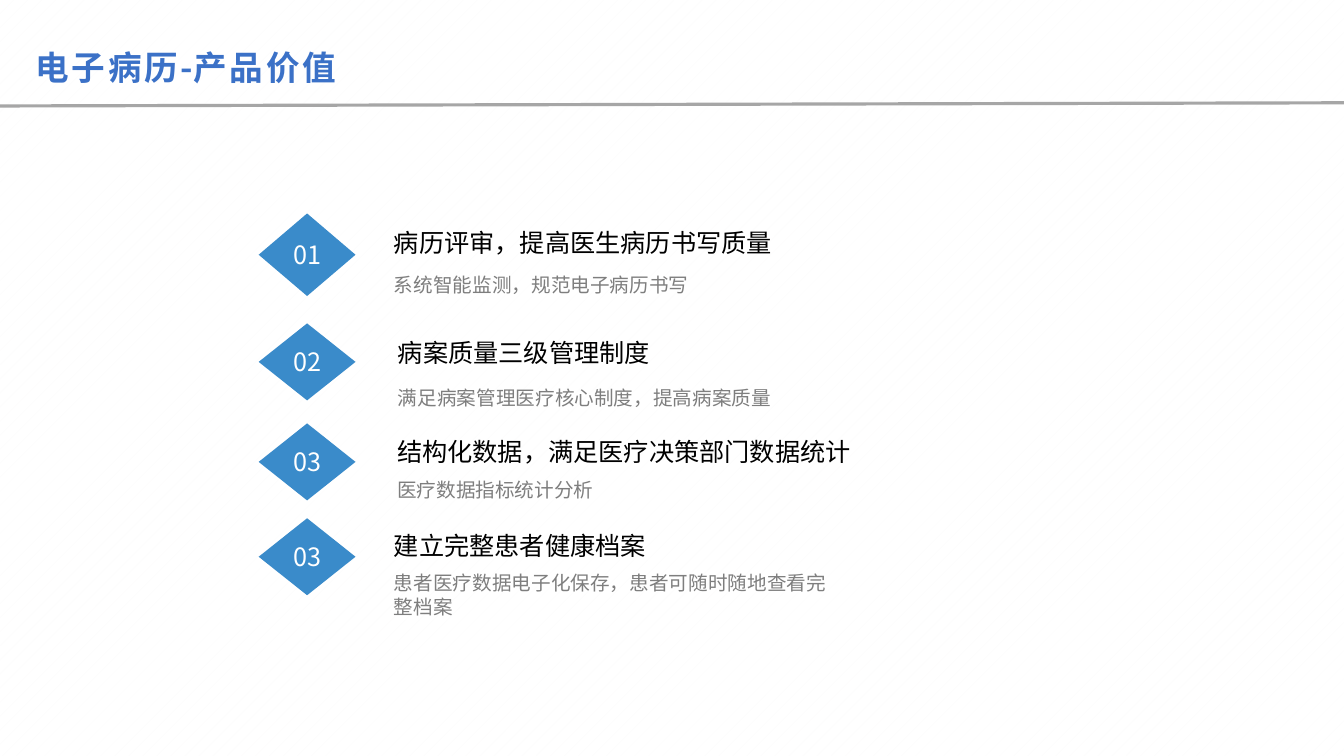
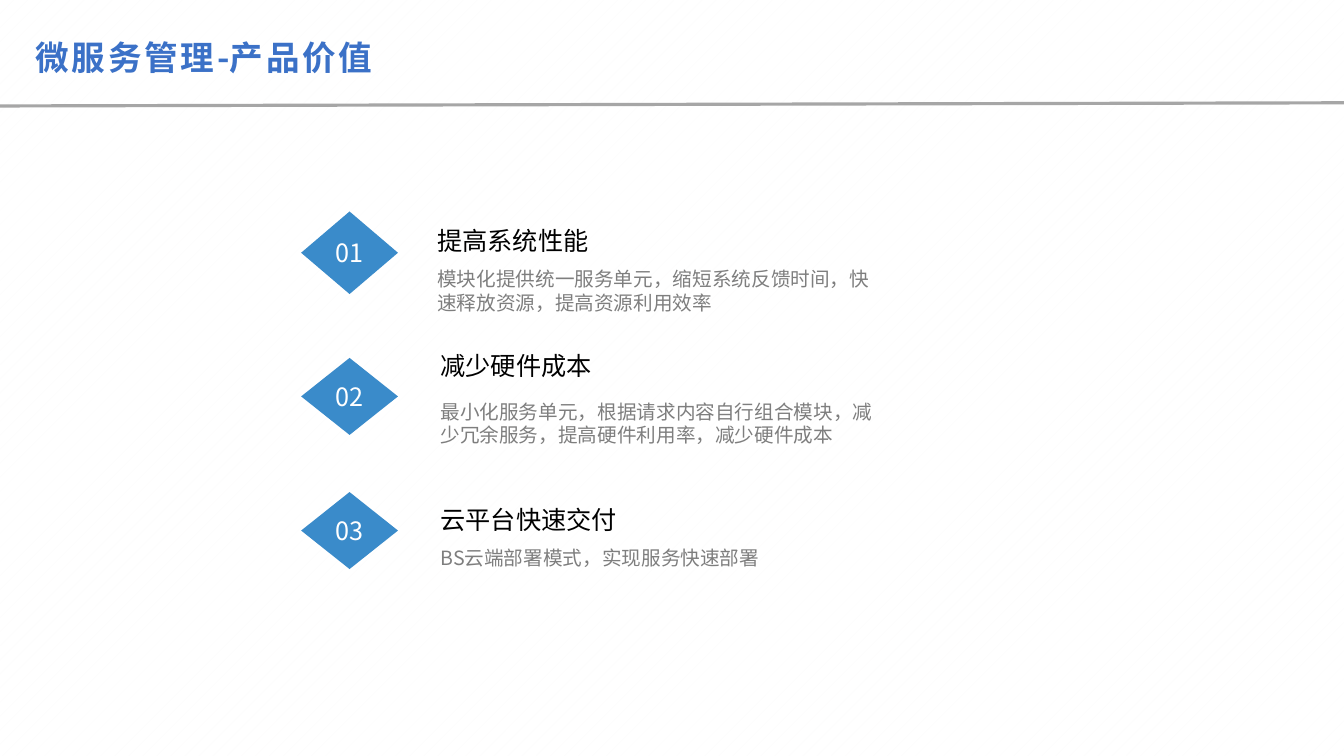
from dataclasses import dataclass

from pptx import Presentation
from pptx.dml.color import RGBColor
from pptx.enum.dml import MSO_PATTERN
from pptx.enum.shapes import MSO_CONNECTOR, MSO_SHAPE
from pptx.enum.text import MSO_ANCHOR, PP_ALIGN
from pptx.oxml.ns import qn
from pptx.oxml.xmlchemy import OxmlElement
from pptx.util import Cm, Pt

# Shared style
WIDE, HIGH = 33.87, 19.05
BLUE, SKY, RULE = "3B71C7", "3A8BCA", "A6A6A6"
BLACK, GREY, WHITE = "000000", "7E7E7E", "FFFFFF"
SANS, LATIN = "Noto Sans CJK SC", "Arial"
GEM = 2.44
FLAT, DEEP = 0.03, 0.38  # top insets of text blocks


@dataclass
class Item:
    num: str
    top: float
    tall: float
    box: tuple[float, float, float, float]
    inset: float
    gap: float
    head: str
    note: str


@dataclass
class Page:
    name: str
    box: tuple[float, float, float, float]
    left: float
    items: list[Item]


PAGES = [
    Page("电子病历", (0.89, 1.14, 8.28, 1.09), 6.52, [
        Item("01", 5.38, 2.08, (9.93, 5.69, 9.6, 1.83), FLAT, 11.2,
             "病历评审，提高医生病历书写质量", "系统智能监测，规范电子病历书写"),
        Item("02", 8.15, 1.94, (10.03, 8.46, 9.47, 1.9), FLAT, 13.4,
             "病案质量三级管理制度", "满足病案管理医疗核心制度，提高病案质量"),
        Item("03", 10.67, 1.94, (10.01, 10.62, 11.51, 2.03), DEEP, 7.7,
             "结构化数据，满足医疗决策部门数据统计", "医疗数据指标统计分析"),
        Item("03", 13.06, 1.94, (9.93, 12.98, 10.95, 2.64), DEEP, 7.7,
             "建立完整患者健康档案",
             "患者医疗数据电子化保存，患者可随时随地查看完 整档案"),
    ]),
    Page("微服务管理", (0.89, 0.89, 10.97, 1.07), 7.59, [
        Item("01", 5.33, 2.08, (11.02, 5.31, 10.95, 2.64), DEEP, 7.9,
             "提高系统性能",
             "模块化提供统一服务单元，缩短系统反馈时间，快 速释放资源，提高资源利用效率"),
        Item("02", 9.02, 1.94, (11.1, 8.81, 10.97, 2.49), FLAT, 13.4,
             "减少硬件成本",
             "最小化服务单元，根据请求内容自行组合模块，减 少冗余服务，提高硬件利用率，减少硬件成本"),
        Item("03", 12.4, 1.94, (11.1, 12.34, 8.05, 2.03), DEEP, 7.7,
             "云平台快速交付", "BS云端部署模式，实现服务快速部署"),
    ]),
]


def tint(code: str) -> RGBColor:
    return RGBColor.from_string(code)


def style(para, size: float, code: str, face: str = SANS, bold: bool = False) -> None:
    font = para.font
    font.size, font.bold, font.name = Pt(size), bold, face
    font.color.rgb = tint(code)
    east = OxmlElement("a:ea")
    east.set("typeface", SANS)
    para._p.pPr.find(qn("a:defRPr")).find(qn("a:latin")).addnext(east)


def trim(frame, top: float = FLAT, wrap: bool = True) -> None:
    frame.word_wrap = wrap
    frame.margin_left = frame.margin_right = frame.margin_bottom = 0
    frame.margin_top = Cm(top)


def add_text(slide, box: tuple, top: float = FLAT):
    frame = slide.shapes.add_textbox(*map(Cm, box)).text_frame
    trim(frame, top)
    return frame


def add_base(slide) -> None:
    # Faint dotted ground
    fill = slide.background.fill
    fill.patterned()
    fill.pattern = MSO_PATTERN.PERCENT_5
    fill.fore_color.rgb, fill.back_color.rgb = tint("FCFBFB"), tint(WHITE)
    # Rule below the title
    rule = slide.shapes.add_connector(
        MSO_CONNECTOR.STRAIGHT, 0, Cm(2.67), Cm(WIDE), Cm(2.59))
    rule.line.color.rgb, rule.line.width = tint(RULE), Pt(2.28)
    rule._element.spPr.append(OxmlElement("a:effectLst"))


def add_title(slide, page: Page) -> None:
    frame = add_text(slide, page.box)
    frame.vertical_anchor = MSO_ANCHOR.MIDDLE
    para = frame.paragraphs[0]
    style(para, 24, BLUE, LATIN, True)
    for text, space in ((page.name, 200), ("-", -10), ("产品价值", 200)):
        run = para.add_run()
        run.text = text
        run._r.get_or_add_rPr().set("spc", str(space))
        if text == "-":
            run.font.name = SANS


def add_item(slide, left: float, item: Item) -> None:
    # Numbered diamond
    gem = slide.shapes.add_shape(
        MSO_SHAPE.DIAMOND, Cm(left), Cm(item.top), Cm(GEM), Cm(item.tall))
    gem.shadow.inherit = False
    gem.fill.solid()
    gem.fill.fore_color.rgb = tint(SKY)
    gem.line.fill.background()
    frame = gem.text_frame
    trim(frame, 0, False)
    frame.vertical_anchor = MSO_ANCHOR.MIDDLE
    para = frame.paragraphs[0]
    para.text, para.alignment = item.num, PP_ALIGN.CENTER
    style(para, 18, WHITE)
    # Heading and note
    frame = add_text(slide, item.box, item.inset)
    head, note = frame.paragraphs[0], frame.add_paragraph()
    head.text, note.text = item.head, item.note
    note.space_before = Pt(item.gap)
    style(head, 18, BLACK)
    style(note, 14, GREY)


def main() -> None:
    deck = Presentation()
    deck.slide_width, deck.slide_height = Cm(WIDE), Cm(HIGH)
    for page in PAGES:
        slide = deck.slides.add_slide(deck.slide_layouts[6])
        add_base(slide)
        add_title(slide, page)
        for item in page.items:
            add_item(slide, page.left, item)
    deck.save("out.pptx")


if __name__ == "__main__":
    main()
